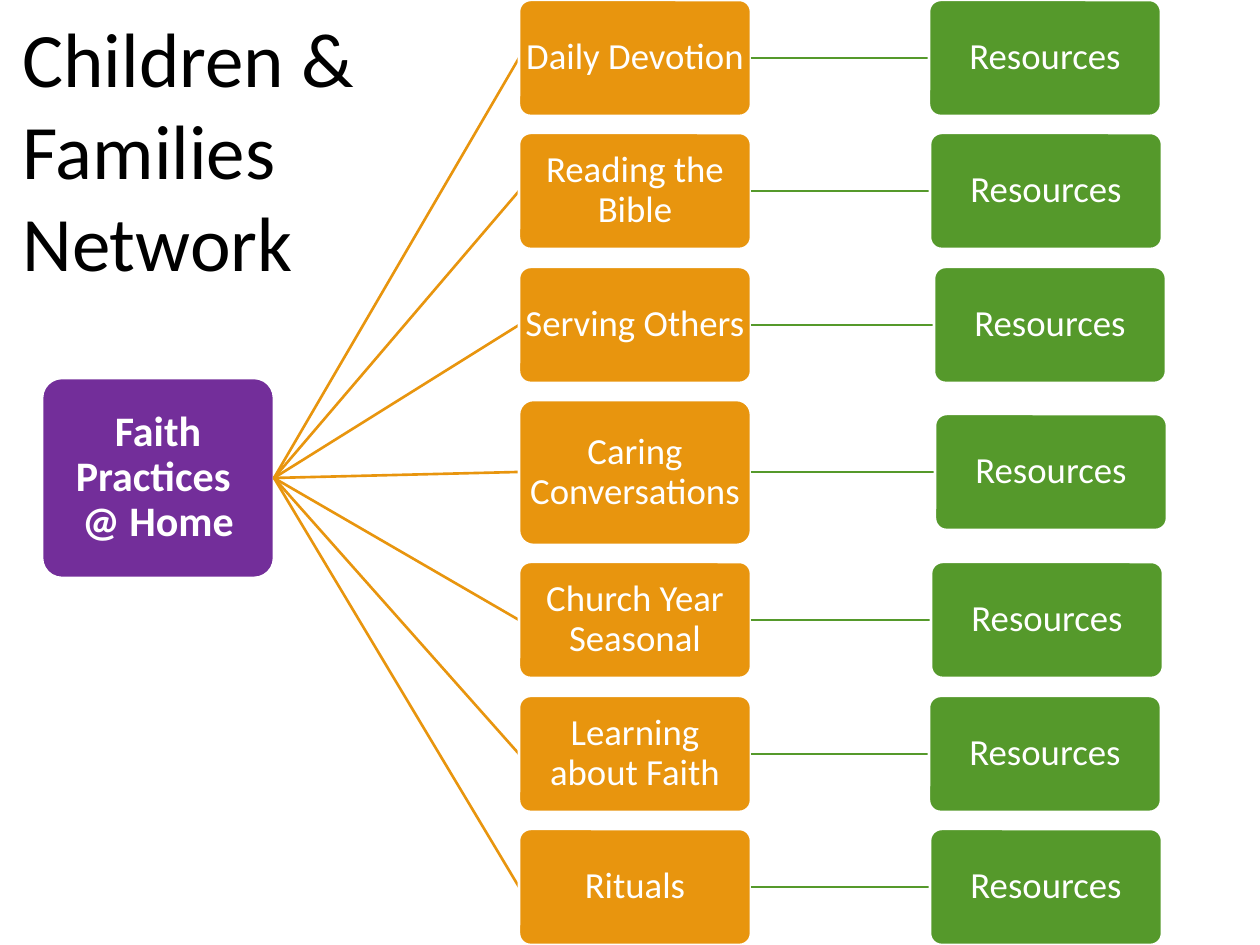
from dataclasses import dataclass

from lxml import etree
from pptx import Presentation
from pptx.dml.color import RGBColor
from pptx.enum.shapes import MSO_CONNECTOR, MSO_SHAPE
from pptx.enum.text import MSO_ANCHOR, MSO_AUTO_SIZE, PP_ALIGN
from pptx.oxml.ns import qn
from pptx.util import Emu, Pt

PX = 914400 / 126
SLIDE_W, SLIDE_H = 1260, 945

PURPLE = RGBColor(0x73, 0x2E, 0x9A)
ORANGE = RGBColor(0xE8, 0x95, 0x0E)
GREEN = RGBColor(0x55, 0x99, 0x2B)
WHITE = RGBColor(0xFF, 0xFF, 0xFF)
BLACK = RGBColor(0x00, 0x00, 0x00)

ROUNDED = MSO_SHAPE.ROUNDED_RECTANGLE
STRAIGHT = MSO_CONNECTOR.STRAIGHT
MIDDLE = MSO_ANCHOR.MIDDLE
FIT_SHAPE = MSO_AUTO_SIZE.SHAPE_TO_FIT_TEXT
LEFT, CENTER = PP_ALIGN.LEFT, PP_ALIGN.CENTER

FONT = "Calibri"
LINE_WIDTH = Pt(1.5)
NODE_W, NODE_H = 232, 116
TOPIC_LEFT = 519


@dataclass(frozen=True)
class Node:
    label: str
    left: int
    top: int
    height: int
    color: RGBColor

    @property
    def right(self) -> int:
        return self.left + NODE_W

    @property
    def middle(self) -> int:
        return self.top + self.height // 2


@dataclass(frozen=True)
class Practice:
    label: str
    resource_left: int
    height: int = NODE_H


PRACTICES = [
    Practice("Daily Devotion", 929),
    Practice("Reading the Bible", 930),
    Practice("Serving Others", 934),
    Practice("Caring Conversations", 935, 145),
    Practice("Church Year Seasonal", 931),
    Practice("Learning about Faith", 929),
    Practice("Rituals", 930),
]


def px(length: float) -> Emu:
    return Emu(round(length * PX))


def write_text(frame, paragraphs: list[str], *, size: int, color: RGBColor,
               bold: bool = False, align=LEFT, spacing: float = 1.0) -> None:
    frame.word_wrap = True
    for index, text in enumerate(paragraphs):
        paragraph = frame.add_paragraph() if index else frame.paragraphs[0]
        paragraph.alignment = align
        paragraph.line_spacing = spacing
        for row, line in enumerate(text.split("\n")):
            if row:
                paragraph.add_line_break()
            run = paragraph.add_run()
            run.text = line
            run.font.name = FONT
            run.font.size = Pt(size)
            run.font.bold = bold
            run.font.color.rgb = color


def draw_node(slide, node: Node, *, size: int = 21, bold: bool = False,
              inset: int = 2) -> None:
    box = slide.shapes.add_shape(ROUNDED, px(node.left), px(node.top),
                                 px(NODE_W), px(node.height))
    box.adjustments[0] = 0.1
    box.shadow.inherit = False
    box.fill.solid()
    box.fill.fore_color.rgb = node.color
    box.line.color.rgb = WHITE
    box.line.width = LINE_WIDTH
    frame = box.text_frame
    frame.vertical_anchor = MIDDLE
    frame.margin_left = frame.margin_right = px(inset)
    frame.margin_top = frame.margin_bottom = px(inset)
    write_text(frame, [node.label], size=size, color=WHITE, bold=bold,
               align=CENTER, spacing=0.9)


def draw_link(slide, start: Node, end: Node) -> None:
    link = slide.shapes.add_connector(STRAIGHT, px(start.right), px(start.middle),
                                      px(end.left), px(end.middle))
    link.line.color.rgb = end.color
    link.line.width = LINE_WIDTH
    etree.SubElement(link._element.spPr, qn("a:effectLst"))


def draw_title(slide) -> None:
    title = slide.shapes.add_textbox(px(10), px(4), px(388), px(292))
    write_text(title.text_frame, ["Children & Families", "Network"],
               size=44, color=BLACK)
    title.text_frame.auto_size = FIT_SHAPE


def main() -> None:
    deck = Presentation()
    deck.slide_width, deck.slide_height = px(SLIDE_W), px(SLIDE_H)
    slide = deck.slides.add_slide(deck.slide_layouts[6])

    home = Node("Faith Practices \n@ Home", 42, 378, 200, PURPLE)
    draw_node(slide, home, size=24, bold=True, inset=3)

    total_height = sum(practice.height for practice in PRACTICES)
    gap = (SLIDE_H - total_height) / (len(PRACTICES) - 1)
    top = 0.0
    for practice in PRACTICES:
        topic = Node(practice.label, TOPIC_LEFT, round(top), practice.height, ORANGE)
        resource = Node("Resources", practice.resource_left,
                        topic.middle - NODE_H // 2, NODE_H, GREEN)
        draw_link(slide, home, topic)
        draw_node(slide, topic)
        draw_link(slide, topic, resource)
        draw_node(slide, resource)
        top += practice.height + gap

    draw_title(slide)
    deck.save("out.pptx")


if __name__ == "__main__":
    main()
